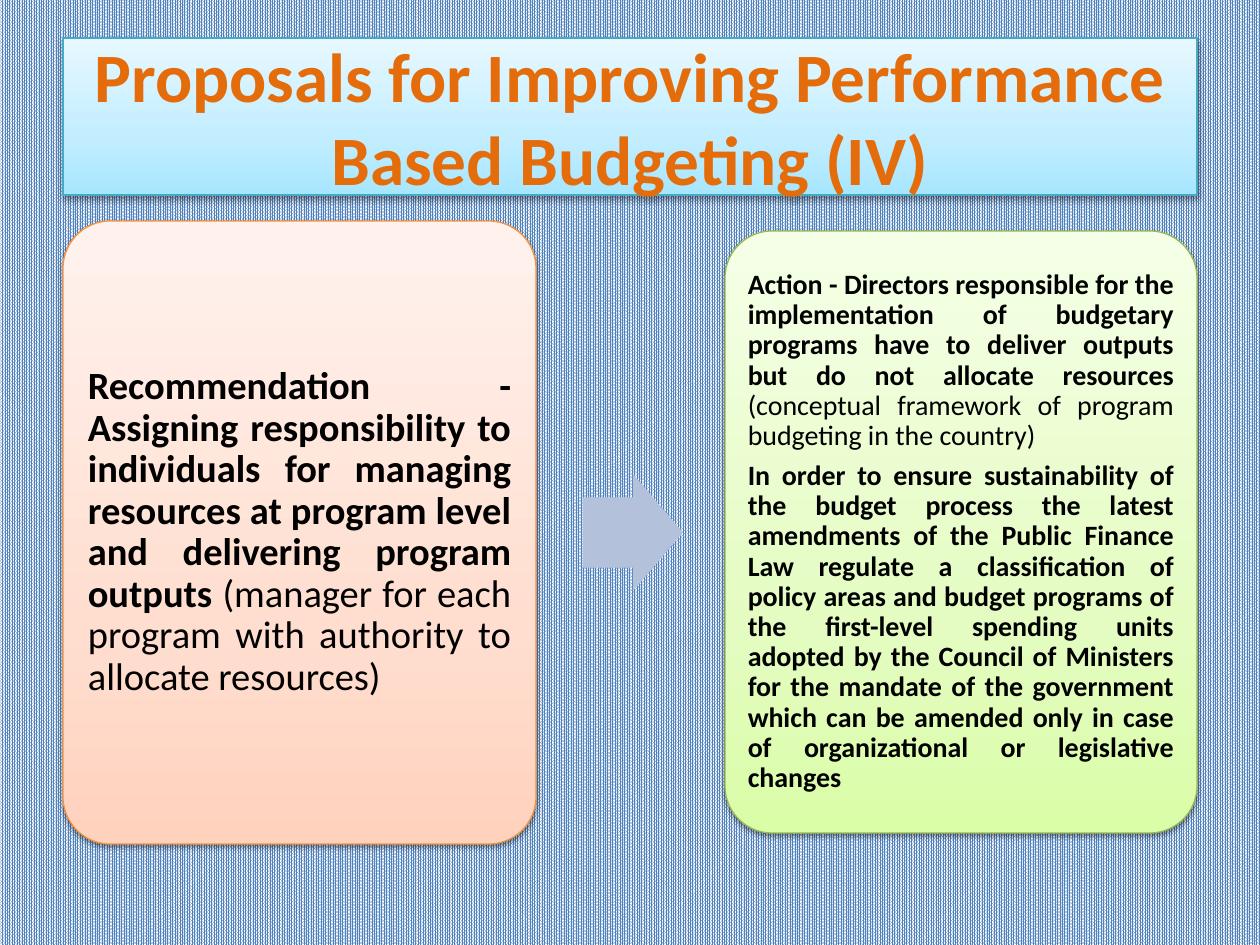
from dataclasses import dataclass

from lxml import etree
from pptx import Presentation
from pptx import util as u
from pptx.dml.color import RGBColor
from pptx.enum import dml, shapes, text
from pptx.oxml.ns import qn

SCALE = u.Inches(1) / 126


@dataclass(frozen=True)
class Tint:
    low: str
    mid: str
    high: str
    edge: str


@dataclass(frozen=True)
class Theme:
    font: str = "Calibri"
    title: str = "E46C0A"
    ink: str = "000000"
    back: str = "4F81BD"
    paper: str = "FFFFFF"
    arrow: str = "B3C1DB"
    blue: Tint = Tint("A7E6FF", "C1EDFF", "E7F8FF", "46AAC5")
    peach: Tint = Tint("FFD2BD", "FFDED0", "FFF2ED", "F69240")
    green: Tint = Tint("DAFDA7", "E4FCC2", "F5FFE7", "98B955")
    head: float = 39.6
    large: float = 22
    small: float = 16


@dataclass(frozen=True)
class Box:
    x: int
    y: int
    w: int
    h: int


@dataclass(frozen=True)
class Card:
    box: Box
    tint: Tint
    size: float
    pad: int
    paras: list  # one list of (words, bold) runs per paragraph


THEME = Theme()

CARDS = [
    Card(Box(63, 221, 473, 623), THEME.peach, THEME.large, 11, [
        [("Recommendation - Assigning responsibility to individuals for managing "
          "resources at program level and delivering program outputs ", True),
         ("(manager for each program with authority to allocate resources)", False)],
    ]),
    Card(Box(725, 231, 472, 602), THEME.green, THEME.small, 9, [
        [("Action - Directors responsible for the implementation of budgetary "
          "programs have to deliver outputs but do not allocate resources ", True),
         ("(conceptual framework of program budgeting in the country)", False)],
        [("In order to ensure sustainability of the budget process the latest "
          "amendments of the Public Finance Law regulate a classification of policy "
          "areas and budget programs of the first-level spending units adopted by the "
          "Council of Ministers for the mandate of the government which can be amended "
          "only in case of organizational or legislative changes", True)],
    ]),
]


def px(n: int) -> int:
    return round(n * SCALE)


def rgb(code: str) -> RGBColor:
    return RGBColor.from_string(code)


def place(shape, box: Box) -> None:
    shape.left, shape.top = px(box.x), px(box.y)
    shape.width, shape.height = px(box.w), px(box.h)


def write(para, words: str, *, size: float, color: str, bold: bool = False) -> None:
    run = para.add_run()
    run.text = words
    font = run.font
    font.name, font.size, font.bold = THEME.font, u.Pt(size), bold
    font.color.rgb = rgb(color)


def add(parent, tag: str, **attrs: str):
    return etree.SubElement(parent, qn(tag), attrs)


def paint(shape, tint: Tint) -> None:
    """Give a shape its upward gradient, thin edge and soft drop shadow."""
    shape.fill.gradient()
    shape.fill.gradient_angle = 90
    props = shape._element.spPr
    stops = props.find(qn("a:gradFill")).find(qn("a:gsLst"))
    for stop in list(stops):
        stops.remove(stop)
    for pos, code in ((0, tint.low), (35, tint.mid), (100, tint.high)):
        stop = add(stops, "a:gs", pos=str(pos * 1000))
        add(stop, "a:srgbClr", val=code)

    shape.line.color.rgb = rgb(tint.edge)
    shape.line.width = u.Pt(0.75)

    shape.shadow.inherit = False
    shade = add(props.find(qn("a:effectLst")), "a:outerShdw",
                blurRad=str(u.Pt(3.1)), dist=str(u.Pt(1.6)),
                dir="5400000", rotWithShape="0")
    add(add(shade, "a:srgbClr", val=THEME.ink), "a:alpha", val="38000")


def draw_title(slide) -> None:
    title = slide.shapes.title
    place(title, Box(63, 38, 1134, 157))
    paint(title, THEME.blue)
    frame = title.text_frame
    frame.auto_size = text.MSO_AUTO_SIZE.NONE
    frame.vertical_anchor = text.MSO_ANCHOR.MIDDLE
    para = frame.paragraphs[0]
    para.alignment = text.PP_ALIGN.CENTER
    write(para, "Proposals for Improving Performance Based Budgeting (IV)",
          size=THEME.head, color=THEME.title, bold=True)


def draw_shape(slide, kind, box: Box, *adjust: float):
    shape = slide.shapes.add_shape(kind, 0, 0, 0, 0)
    place(shape, box)
    for i, value in enumerate(adjust):
        shape.adjustments[i] = value
    return shape


def draw_card(slide, card: Card) -> None:
    shape = draw_shape(slide, shapes.MSO_SHAPE.ROUNDED_RECTANGLE, card.box, 0.1)
    paint(shape, card.tint)
    frame = shape.text_frame
    frame.word_wrap = True
    frame.vertical_anchor = text.MSO_ANCHOR.MIDDLE
    frame.margin_left = frame.margin_right = px(card.pad)
    frame.margin_top = frame.margin_bottom = px(card.pad)
    for i, runs in enumerate(card.paras):
        para = frame.add_paragraph() if i else frame.paragraphs[0]
        para.alignment = text.PP_ALIGN.JUSTIFY
        para.line_spacing = 0.9
        para.space_after = u.Pt(card.size * 0.35)
        for words, bold in runs:
            write(para, words, size=card.size, color=THEME.ink, bold=bold)


def draw_arrow(slide) -> None:
    arrow = draw_shape(slide, shapes.MSO_SHAPE.RIGHT_ARROW,
                       Box(583, 474, 100, 117), 0.6, 0.5)
    arrow.shadow.inherit = False
    arrow.fill.solid()
    arrow.fill.fore_color.rgb = rgb(THEME.arrow)
    arrow.line.fill.background()


def main() -> None:
    deck = Presentation()
    deck.slide_width, deck.slide_height = px(1260), px(945)
    slide = deck.slides.add_slide(deck.slide_layouts.get_by_name("Title Only"))

    fill = slide.background.fill
    fill.patterned()
    fill.pattern = dml.MSO_PATTERN.PERCENT_90
    fill.fore_color.rgb = rgb(THEME.back)
    fill.back_color.rgb = rgb(THEME.paper)

    draw_title(slide)
    left, right = CARDS
    draw_card(slide, left)
    draw_arrow(slide)
    draw_card(slide, right)
    deck.save("out.pptx")


if __name__ == "__main__":
    main()
